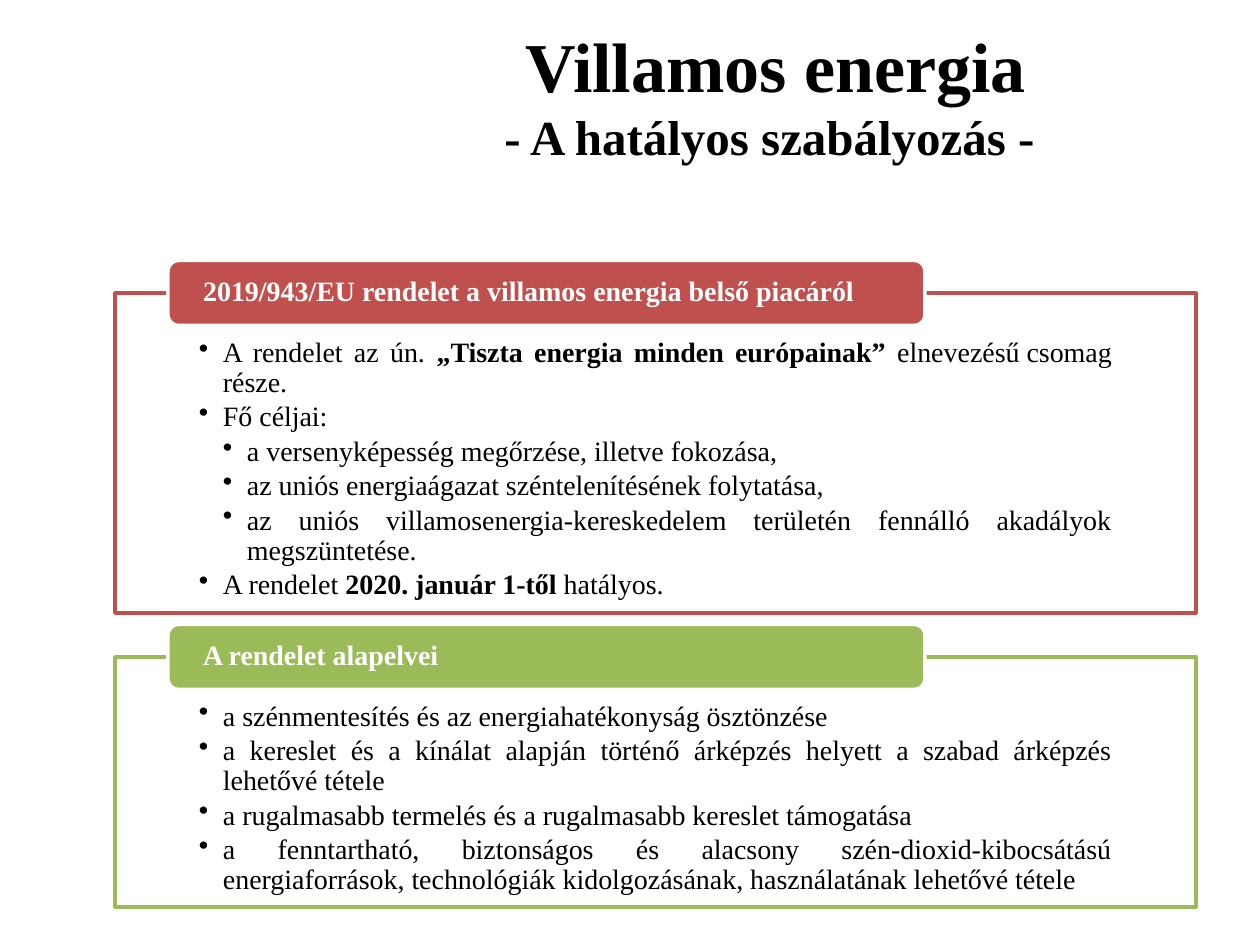
from pptx import Presentation
from pptx.dml.color import RGBColor
from pptx.enum.shapes import MSO_SHAPE
from pptx.enum.text import MSO_ANCHOR, PP_ALIGN
from pptx.util import Pt
from lxml import etree

RECT, ROUNDED = MSO_SHAPE.RECTANGLE, MSO_SHAPE.ROUNDED_RECTANGLE
TOP, MIDDLE = MSO_ANCHOR.TOP, MSO_ANCHOR.MIDDLE
LEFT, CENTER, JUSTIFY = PP_ALIGN.LEFT, PP_ALIGN.CENTER, PP_ALIGN.JUSTIFY
BLACK = RGBColor(0x00, 0x00, 0x00)
WHITE = RGBColor(0xFF, 0xFF, 0xFF)
RED = RGBColor(0xC0, 0x50, 0x4D)
GREEN = RGBColor(0x9B, 0xBB, 0x59)
FONT = "Times New Roman"
BULLET_TAG = "{http://schemas.openxmlformats.org/drawingml/2006/main}buChar"

# Content: title lines with sizes, then sections of (level, text pieces);
# every second text piece is bold
TITLE = [("Villamos energia", 40), ("- A hatályos szabályozás - ", 28)]
SECTIONS = [
    {
        "heading": "2019/943/EU rendelet a villamos energia belső piacáról",
        "color": RED, "top": 293, "height": 320,
        "points": [
            (1, ["A rendelet az ún. ", "„Tiszta energia minden európainak” ",
                 "elnevezésű\u00a0csomag része."]),
            (1, ["Fő céljai:"]),
            (2, ["a versenyképesség megőrzése, illetve fokozása, "]),
            (2, ["az uniós energiaágazat széntelenítésének folytatása, "]),
            (2, ["az uniós villamosenergia-kereskedelem területén fennálló "
                 "akadályok megszüntetése."]),
            (1, ["A rendelet ", "2020. január 1-től ", "hatályos."]),
        ],
    },
    {
        "heading": "A rendelet alapelvei",
        "color": GREEN, "top": 657, "height": 250,
        "points": [
            (1, ["a szénmentesítés és az energiahatékonyság ösztönzése"]),
            (1, ["a kereslet és a kínálat alapján történő árképzés helyett "
                 "a szabad árképzés lehetővé tétele"]),
            (1, ["a rugalmasabb termelés és a rugalmasabb kereslet támogatása"]),
            (1, ["a fenntartható, biztonságos és alacsony szén-dioxid-kibocsátású "
                 "energiaforrások, technológiák kidolgozásának, használatának "
                 "lehetővé tétele"]),
        ],
    },
]

# Layout in px
FRAME_LEFT, FRAME_WIDTH = 115, 1081
TAB_LEFT, TAB_WIDTH, TAB_HEIGHT = 168, 757, 65
INDENT = 24


def px(n):
    return round(n * 914400 / 126)


def style(run, size, color, bold):
    run.font.name = FONT
    run.font.size = Pt(size)
    run.font.color.rgb = color
    run.font.bold = bold


def add_panel(slide, kind, box, fill, line, insets, anchor):
    panel = slide.shapes.add_shape(kind, *map(px, box))
    panel.shadow.inherit = False
    panel.fill.solid()
    panel.fill.fore_color.rgb = fill
    panel.line.color.rgb = line
    panel.line.width = Pt(2)
    frame = panel.text_frame
    frame.word_wrap = True
    frame.vertical_anchor = anchor
    (frame.margin_left, frame.margin_top,
     frame.margin_right, frame.margin_bottom) = map(px, insets)
    return panel


def add_point(paragraph, level, pieces):
    paragraph.level = level
    properties = paragraph._p.get_or_add_pPr()
    properties.set("marL", str(px(INDENT * level)))
    properties.set("indent", str(px(-INDENT)))
    etree.SubElement(properties, BULLET_TAG).set("char", "•")
    paragraph.alignment = JUSTIFY
    paragraph.line_spacing = 0.9
    paragraph.space_after = Pt(2.4)
    for i, piece in enumerate(pieces):
        run = paragraph.add_run()
        run.text = piece
        style(run, 16, BLACK, i % 2 == 1)


def add_section(slide, section):
    color, top = section["color"], section["top"]
    # Framed list
    body = add_panel(slide, RECT, (FRAME_LEFT, top, FRAME_WIDTH, section["height"]),
                     WHITE, color, (84, 45, 84, 15), TOP).text_frame
    for i, (level, pieces) in enumerate(section["points"]):
        paragraph = body.add_paragraph() if i else body.paragraphs[0]
        add_point(paragraph, level, pieces)
    # Heading tab centred on the frame's top edge
    tab = add_panel(slide, ROUNDED,
                    (TAB_LEFT, top - TAB_HEIGHT / 2, TAB_WIDTH, TAB_HEIGHT),
                    color, WHITE, (32, 0, 32, 0), MIDDLE)
    heading = tab.text_frame.paragraphs[0]
    heading.text = section["heading"]
    heading.alignment = LEFT
    heading.line_spacing = 0.9
    style(heading.runs[0], 16, WHITE, True)


def main():
    prs = Presentation()
    prs.slide_width, prs.slide_height = px(1260), px(945)
    slide = prs.slides.add_slide(prs.slide_layouts[6])

    # Title
    title = slide.shapes.add_textbox(px(329), px(16), px(893), px(158)).text_frame
    title.word_wrap = True
    title.text = "\n".join(text for text, _ in TITLE)
    for paragraph, (_, size) in zip(title.paragraphs, TITLE):
        paragraph.alignment = CENTER
        style(paragraph.runs[0], size, BLACK, True)

    for section in SECTIONS:
        add_section(slide, section)
    prs.save("out.pptx")


if __name__ == "__main__":
    main()
